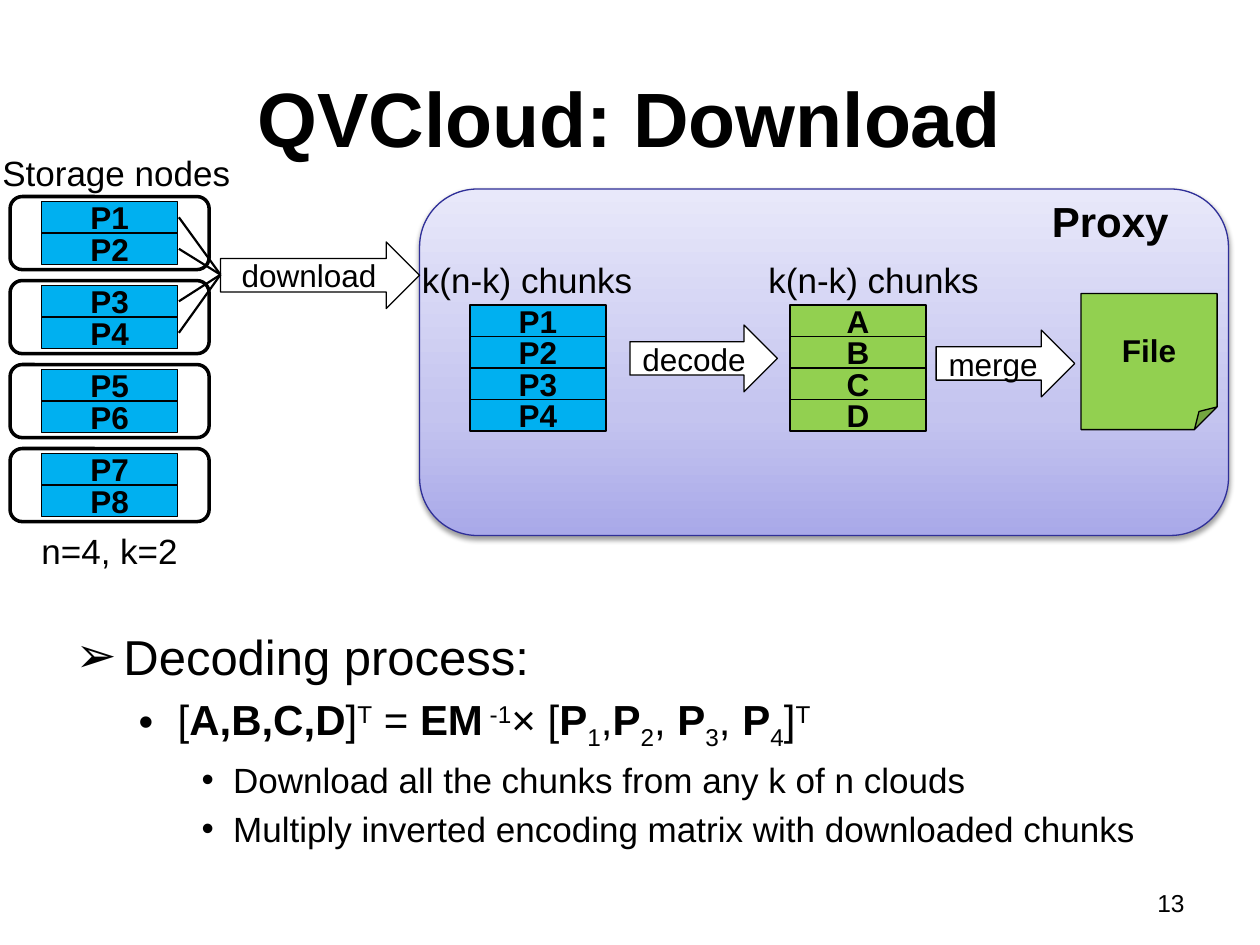
import copy

from lxml import etree
from pptx import Presentation
from pptx import util as u
from pptx.dml.color import RGBColor
from pptx.enum import shapes, text
from pptx.oxml.ns import qn

THEME = {
    "font": "Arial", "ink": "000000", "paper": "FFFFFF",
    "chunk": "00B0F0", "native": "92D050", "proxy_line": "2F2F98",
    "proxy_stops": [(0, "A9A9E9"), (0.35, "C4C4EF"), (1, "E8E8FA")],
    "title": 44, "lead": 28, "head": 24, "note": 20, "label": 18, "number": 14,
}
SHAPE, ALIGN = shapes.MSO_SHAPE, text.PP_ALIGN
INK = RGBColor.from_string(THEME["ink"])

prs = Presentation()
prs.slide_width, prs.slide_height = u.Inches(10), u.Inches(7.5)
slide = prs.slides.add_slide(prs.slide_layouts[1])


def write(paragraph, words, size, bold=False, align=ALIGN.LEFT):
    paragraph.alignment = align
    run = paragraph.add_run()
    run.text = words
    style = {"name": THEME["font"], "size": u.Pt(size), "bold": bold}
    for key, value in style.items():
        setattr(run.font, key, value)
    run.font.color.rgb = INK
    return run


def draw(kind, box, fill=None, line=0.75, label="", bold=True, align=ALIGN.CENTER):
    shape = slide.shapes.add_shape(kind, *map(u.Inches, box))
    shape.shadow.inherit = False
    if fill:
        shape.fill.solid()
        shape.fill.fore_color.rgb = RGBColor.from_string(fill)
    else:
        shape.fill.background()
    shape.line.color.rgb = INK
    shape.line.width = u.Pt(line)
    if label:
        shape.text_frame.vertical_anchor = text.MSO_ANCHOR.MIDDLE
        write(shape.text_frame.paragraphs[0], label, THEME["label"], bold, align)
    return shape


# Title
title, body = slide.placeholders
for holder, box in ((title, (0.5, 0.3, 9, 1.25)), (body, (0.5, 4.92, 9, 2.17))):
    holder.left, holder.top, holder.width, holder.height = map(u.Inches, box)
    holder.text_frame.auto_size = text.MSO_AUTO_SIZE.NONE
title.text_frame.vertical_anchor = text.MSO_ANCHOR.MIDDLE
write(title.text_frame.paragraphs[0], "QVCloud: Download", THEME["title"], True, ALIGN.CENTER)

# Decoding steps: level format, then runs of (words, bold, baseline in percent)
levels = [
    {"size": THEME["lead"], "margin": 0.38, "hang": 0.38, "before": 2, "bullet": "➢"},
    {"size": THEME["head"], "margin": 0.81, "hang": 0.31, "before": 5, "bullet": "•"},
    {"size": THEME["note"], "margin": 1.25, "hang": 0.25, "before": 4, "bullet": "•"},
]
formula = [
    ("[", False, 0), ("A,B,C,D", True, 0), ("]", False, 0), ("T", False, 30),
    (" = ", False, 0), ("EM", True, 0), (" -1", False, 30), ("× [", False, 0),
    ("P", True, 0), ("1", False, -25), (",", False, 0),
    ("P", True, 0), ("2", False, -25), (",", False, 0),
    (" P", True, 0), ("3", False, -25), (", ", False, 0),
    ("P", True, 0), ("4", False, -25), ("]", False, 0), ("T", False, 30),
]
steps = [
    (0, [("Decoding process:", False, 0)]),
    (1, formula),
    (2, [("Download all the chunks from any k of n clouds", False, 0)]),
    (2, [("Multiply inverted encoding matrix with downloaded chunks", False, 0)]),
]
for index, (level, parts) in enumerate(steps):
    frame = body.text_frame
    step = frame.paragraphs[0] if index == 0 else frame.add_paragraph()
    look = levels[level]
    step.level = level
    step.space_before = u.Pt(look["before"])
    for words, bold, baseline in parts:
        run = write(step, words, look["size"], bold)
        if baseline:
            run._r.get_or_add_rPr().set("baseline", str(baseline * 1000))
    props = step._p.get_or_add_pPr()
    props.set("marL", str(u.Inches(look["margin"])))
    props.set("indent", str(-u.Inches(look["hang"])))
    etree.SubElement(props, qn("a:buFont")).set("typeface", THEME["font"])
    etree.SubElement(props, qn("a:buChar")).set("char", look["bullet"])

# Proxy panel with its gradient and shadow
proxy = draw(SHAPE.ROUNDED_RECTANGLE, (3.33, 1.5, 6.42, 2.75), THEME["paper"])
proxy.line.color.rgb = RGBColor.from_string(THEME["proxy_line"])
proxy.fill.gradient()
proxy.fill.gradient_angle = 90
stop_list = proxy._element.spPr.find(qn("a:gradFill")).find(qn("a:gsLst"))
stop_list.insert(1, copy.deepcopy(stop_list[0]))
for stop, (position, colour) in zip(proxy.fill.gradient_stops, THEME["proxy_stops"]):
    stop.position = position
    stop.color.rgb = RGBColor.from_string(colour)
effects = proxy._element.spPr.find(qn("a:effectLst"))
shadow = etree.SubElement(effects, qn("a:outerShdw"), blurRad=str(u.Pt(3.1)),
                          dist=str(u.Pt(1.6)), dir="5400000", rotWithShape="0")
shade = etree.SubElement(shadow, qn("a:srgbClr"), val=THEME["ink"])
etree.SubElement(shade, qn("a:alpha"), val="38000")

# Storage nodes, two chunks each
chunk_w, chunk_h, node_pitch = 1.08, 0.25, 2 / 3
chunk_middles = []
for node in range(4):
    top = 1.56 + node * node_pitch
    draw(SHAPE.ROUNDED_RECTANGLE, (0.08, top, 1.58, 0.58), line=2)
    for half in range(2):
        chunk_top = top + 0.04 + half * chunk_h
        draw(SHAPE.RECTANGLE, (0.33, chunk_top, chunk_w, chunk_h),
             THEME["chunk"], label=f"P{2 * node + half + 1}")
        chunk_middles.append(chunk_top + chunk_h / 2)

# Chunk stacks inside the proxy
stacks = [(3.73, THEME["chunk"], ["P1", "P2", "P3", "P4"]), (6.27, THEME["native"], "ABCD")]
for left, colour, names in stacks:
    for row, name in enumerate(names):
        draw(SHAPE.RECTANGLE, (left, 2.42 + row * chunk_h, chunk_w, chunk_h), colour, label=name)

# Stage arrows and the resulting file
for left, top, width, stage in [(1.75, 1.92, 1.58, " download"),
                                (5, 2.58, 1.17, "decode"), (7.43, 2.62, 1.1, "merge")]:
    draw(SHAPE.RIGHT_ARROW, (left, top, width, 0.53), THEME["paper"],
         label=stage, bold=False, align=ALIGN.LEFT)
draw(SHAPE.FOLDED_CORNER, (8.58, 2.33, 1.08, 1.08), THEME["native"], label="File")

# Captions and page number
captions = [
    ((-0.08, 1.15, 2.03, 0.44), "Storage nodes", THEME["note"], False, ALIGN.LEFT),
    ((0.08, 4.15, 1.58, 0.44), "n=4, k=2", THEME["note"], False, ALIGN.CENTER),
    ((3.25, 2, 1.9, 0.44), "k(n-k) chunks", THEME["note"], False, ALIGN.LEFT),
    ((6, 2, 1.88, 0.44), "k(n-k) chunks", THEME["note"], False, ALIGN.LEFT),
    ((8.25, 1.5, 1.14, 0.5), "Proxy", THEME["head"], True, ALIGN.LEFT),
    ((7.17, 7, 2.33, 0.35), "13", THEME["number"], False, ALIGN.RIGHT),
]
for box, words, size, bold, align in captions:
    caption = slide.shapes.add_textbox(*map(u.Inches, box)).text_frame
    caption.word_wrap = align != ALIGN.LEFT
    write(caption.paragraphs[0], words, size, bold, align)

# Lines from the first four chunks to the download arrow
for middle in chunk_middles[:4]:
    ends = map(u.Inches, (1.42, middle, 1.75, 2.18))
    link = slide.shapes.add_connector(shapes.MSO_CONNECTOR.STRAIGHT, *ends)
    link.line.color.rgb = INK
    link.line.width = u.Pt(1.25)
    etree.SubElement(link._element.spPr, qn("a:effectLst"))

prs.save("out.pptx")
